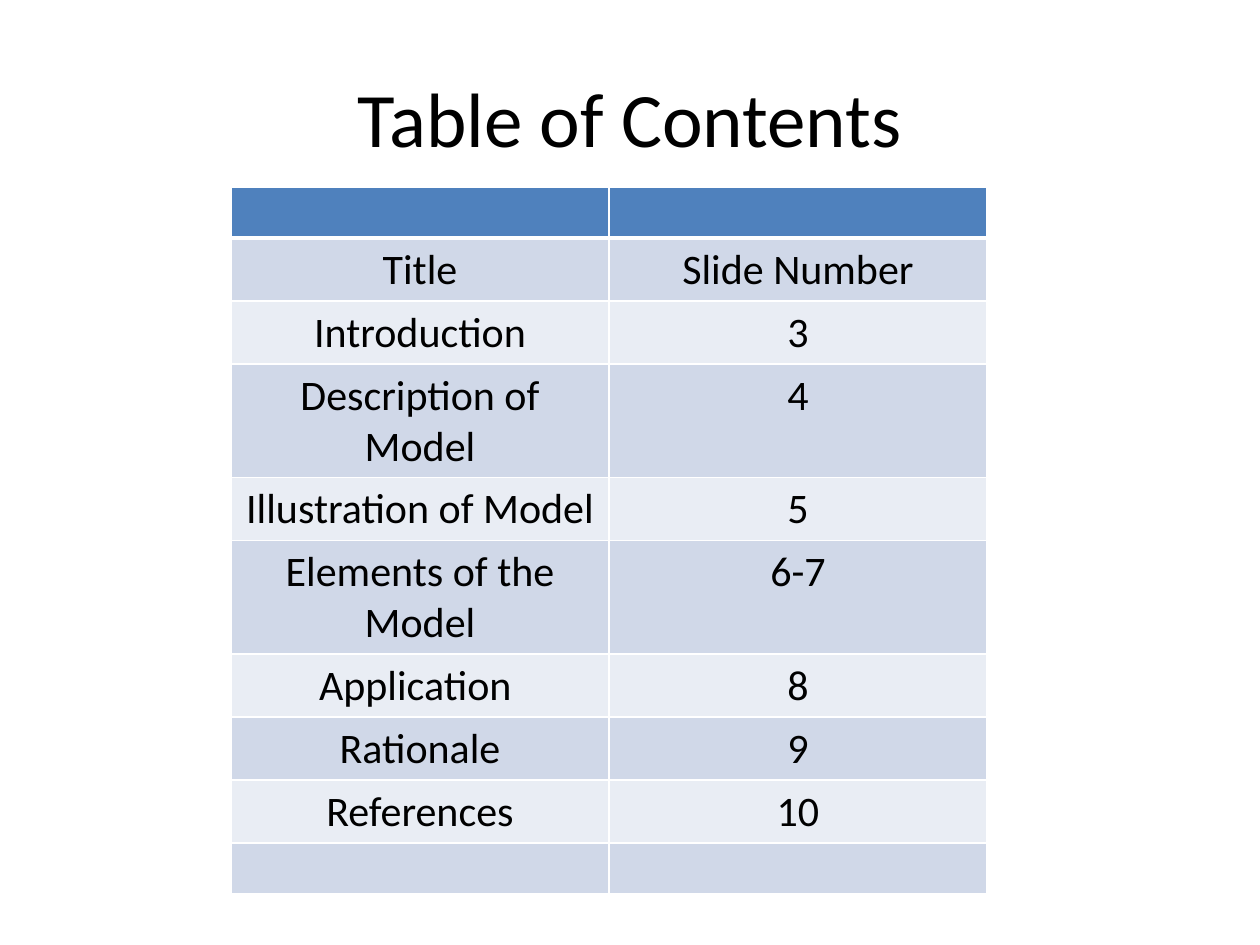
import pptx
import pptx.util
import pptx.dml.color
import pptx.enum.text
import pptx.oxml
import pptx.oxml.ns

WIDE, HIGH = 10, 7.5
COLS, ROWS = 200, 150

THEME = {
    "font": "Calibri",
    "ink": "000000",
    "head": "4F81BD",
    "bands": ("D0D8E8", "E9EDF4"),
    "rule": "FFFFFF",
    "thin": 1,
    "thick": 3,
    "title": 44,
    "body": 24,
}

TABLE = [
    ("", ""),
    ("Title", "Slide Number"),
    ("Introduction", "3"),
    ("Description of Model", "4"),
    ("Illustration of Model", "5"),
    ("Elements of the Model", "6-7"),
    ("Application ", "8"),
    ("Rationale", "9"),
    ("References", "10"),
    ("", ""),
]


def place(col, row, cols, rows):
    across, down = WIDE / COLS, HIGH / ROWS
    sides = (col * across, row * down, cols * across, rows * down)
    return [pptx.util.Inches(side) for side in sides]


def style(item, form):
    for name, value in form.items():
        setattr(item, name, value)


def tint(code):
    return pptx.dml.color.RGBColor.from_string(code)


def write(frame, words, size):
    para = frame.paragraphs[0]
    para.alignment = pptx.enum.text.PP_ALIGN.CENTER
    run = para.add_run()
    run.text = words
    style(run.font, {"name": THEME["font"], "size": pptx.util.Pt(size)})
    run.font.color.rgb = tint(THEME["ink"])


def edge(cell, side, width):
    space = pptx.oxml.ns.nsdecls("a")
    line = pptx.oxml.parse_xml(
        f'<a:ln{side} {space} w="{pptx.util.Pt(width)}"><a:solidFill>'
        f'<a:srgbClr val="{THEME["rule"]}"/></a:solidFill></a:ln{side}>'
    )
    cell._tc.get_or_add_tcPr().append(line)


def paint(cell, row):
    for side in "LRTB":
        heavy = (row == 0 and side == "B") or (row == 1 and side == "T")
        edge(cell, side, THEME["thick" if heavy else "thin"])
    cell.fill.solid()
    band = THEME["bands"][(row - 1) % 2]
    cell.fill.fore_color.rgb = tint(band if row else THEME["head"])


def add_title(slide, words, *spot):
    frame = slide.shapes.add_textbox(*place(*spot)).text_frame
    style(frame, {
        "word_wrap": True,
        "vertical_anchor": pptx.enum.text.MSO_ANCHOR.MIDDLE,
    })
    write(frame, words, THEME["title"])


def add_grid(slide, lines, *spot):
    size = len(lines), len(lines[0])
    table = slide.shapes.add_table(*size, *place(*spot)).table
    for row, line in enumerate(lines):
        for col, words in enumerate(line):
            cell = table.cell(row, col)
            paint(cell, row)
            if words:
                write(cell.text_frame, words, THEME["body"])


def main():
    deck = pptx.Presentation()
    style(deck, {
        "slide_width": pptx.util.Inches(WIDE),
        "slide_height": pptx.util.Inches(HIGH),
    })
    slide = deck.slides.add_slide(deck.slide_layouts[6])
    add_title(slide, "Table of Contents", 10, 6, 180, 25)
    add_grid(slide, TABLE, 36.67, 29.67, 120, 81)
    deck.save("out.pptx")


if __name__ == "__main__":
    main()
